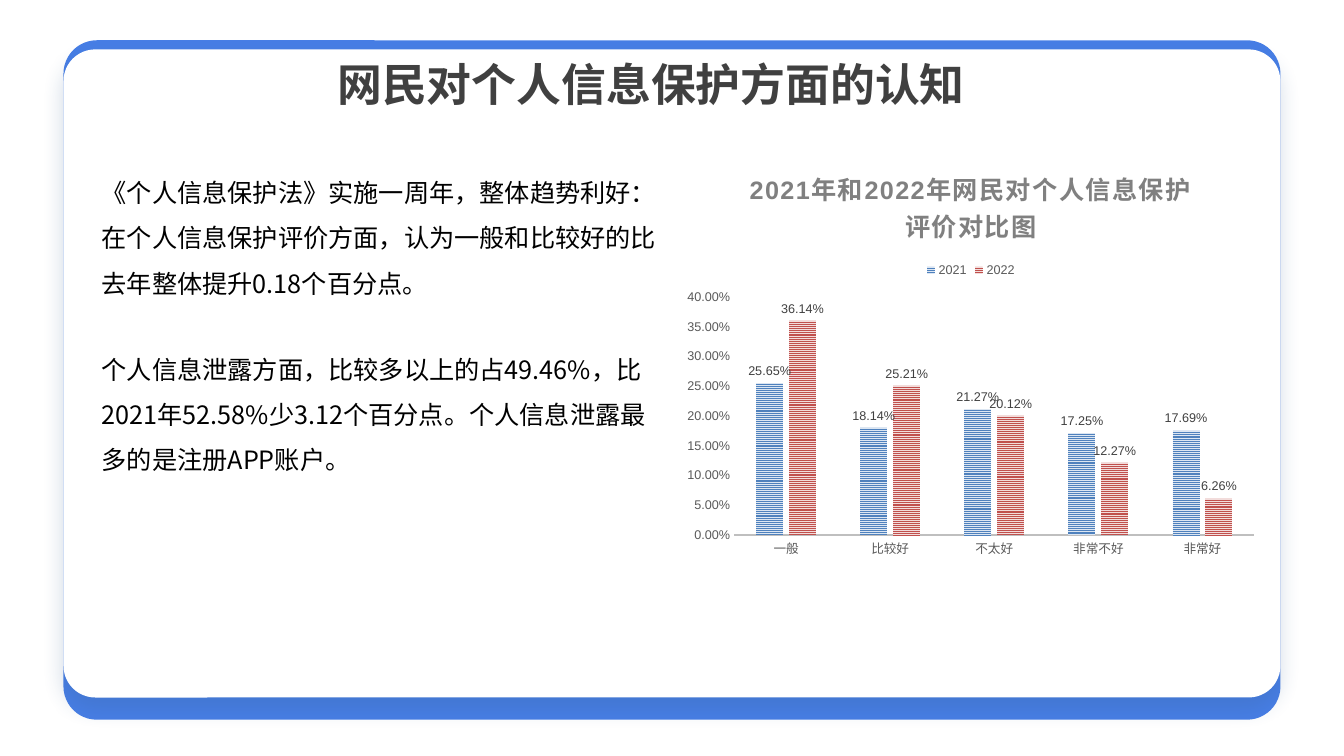
from lxml import etree
from pptx import Presentation
from pptx.chart.data import CategoryChartData
from pptx.dml.color import RGBColor
from pptx.enum.chart import XL_CHART_TYPE, XL_LABEL_POSITION, XL_LEGEND_POSITION, XL_TICK_MARK
from pptx.enum.dml import MSO_PATTERN
from pptx.enum.shapes import MSO_SHAPE
from pptx.enum.text import PP_ALIGN
from pptx.oxml import parse_xml
from pptx.oxml.ns import nsdecls, qn
from pptx.util import Inches, Pt

BLUE = RGBColor(0x47, 0x7E, 0xE5)
WHITE = RGBColor(0xFF, 0xFF, 0xFF)
BLACK = RGBColor(0, 0, 0)
DARK = RGBColor(0x40, 0x40, 0x40)
GRAY = RGBColor(0x59, 0x59, 0x59)
MID = RGBColor(0x80, 0x80, 0x80)
PALE = RGBColor(0xBF, 0xBF, 0xBF)
BAR_BLUE = RGBColor(0x4F, 0x81, 0xBD)
BAR_RED = RGBColor(0xC0, 0x50, 0x4D)
ICE = RGBColor(0xDC, 0xE6, 0xF2)
ROSE = RGBColor(0xF2, 0xDC, 0xDB)
CJK = "Noto Sans CJK SC"


def style(font, size, color, name="Arial", bold=False):
    font.size = Pt(size)
    font.color.rgb = color
    font.name = name
    font.bold = bold


def write(para, text, size=18, color=BLACK, name=CJK, bold=False,
          align=None, line=None, before=None, track=None):
    run = para.add_run()
    run.text = text
    style(run.font, size, color, name, bold)
    props = run.font._element
    etree.SubElement(props, qn("a:ea")).set("typeface", CJK)
    if track:
        props.set("spc", str(track))
    if align is not None:
        para.alignment = align
    if line:
        para.line_spacing = line
    if before:
        para.space_before = Pt(before)


prs = Presentation()
prs.slide_width = Inches(13.33)
prs.slide_height = Inches(7.5)
slide = prs.slides.add_slide(prs.slide_layouts[6])
shapes = slide.shapes

for top, height, color in [(0.4, 6.74, BLUE), (0.49, 6.43, WHITE)]:
    card = shapes.add_shape(MSO_SHAPE.ROUNDED_RECTANGLE, Inches(0.63), Inches(top),
                            Inches(12.07), Inches(height))
    card.adjustments[0] = 0.049
    card.fill.solid()
    card.fill.fore_color.rgb = color
    card.line.fill.background()
    card.shadow.inherit = False

glow = card._element.spPr.find(qn("a:effectLst"))
glow.append(parse_xml(
    f'<a:outerShdw {nsdecls("a")} blurRad="{Pt(16)}" dist="{Pt(8)}" dir="5400000" '
    'algn="t" rotWithShape="0"><a:srgbClr val="376092"><a:alpha val="23000"/>'
    '</a:srgbClr></a:outerShdw>'))

title = shapes.add_textbox(Inches(2.33), Inches(0.51), Inches(8.26), Inches(0.64))
title.text_frame.word_wrap = True
write(title.text_frame.paragraphs[0], "网民对个人信息保护方面的认知", size=32, color=DARK,
      name="Arial", bold=True, align=PP_ALIGN.CENTER)

data = CategoryChartData(number_format="0.00%")
data.categories = ["一般", "比较好", "不太好", "非常不好", "非常好"]
data.add_series("2021", [0.2565, 0.1814, 0.2127, 0.1725, 0.1769])
data.add_series("2022", [0.3614, 0.2521, 0.2012, 0.1227, 0.0626])
chart = shapes.add_chart(XL_CHART_TYPE.COLUMN_CLUSTERED, Inches(6.7), Inches(1.48),
                         Inches(5.86), Inches(4.13), data).chart
style(chart.font, 10, BLACK)
chart.has_title = True
head = chart.chart_title
head.include_in_layout = False
write(head.text_frame.paragraphs[0], "2021年和2022年网民对个人信息保护评价对比图",
      color=MID, name="Arial", bold=True, track=100)
chart.has_legend = True
chart.legend.position = XL_LEGEND_POSITION.TOP
chart.legend.include_in_layout = False
style(chart.legend.font, 9, GRAY)

for axis in (chart.category_axis, chart.value_axis):
    axis.has_major_gridlines = False
    axis.major_tick_mark = XL_TICK_MARK.NONE
    axis.minor_tick_mark = XL_TICK_MARK.NONE
    style(axis.tick_labels.font, 9, GRAY)
chart.category_axis.format.line.color.rgb = PALE
chart.category_axis.format.line.width = Pt(1.5)
chart.value_axis.format.line.fill.background()
chart.value_axis.tick_labels.number_format = "0.00%"
chart.value_axis.tick_labels.number_format_is_linked = False

plot = chart.plots[0]
plot.vary_by_categories = False
plot.gap_width = 164
plot.overlap = -22
for series, (front, back) in zip(plot.series, [(BAR_BLUE, ICE), (BAR_RED, ROSE)]):
    fill = series.format.fill
    fill.patterned()
    fill.pattern = MSO_PATTERN.NARROW_HORIZONTAL
    fill.fore_color.rgb = front
    fill.back_color.rgb = back
    labels = series.data_labels
    labels.show_value = True
    labels.position = XL_LABEL_POSITION.OUTSIDE_END
    labels.number_format = "0.00%"
    labels.number_format_is_linked = False
    style(labels.font, 9, DARK)

body = shapes.add_textbox(Inches(0.91), Inches(1.56), Inches(5.79), Inches(1.17))
frame = body.text_frame
frame.word_wrap = True
para = frame.paragraphs[0]
write(para, "《个人信息保护法》实施一周年，整体趋势利好：", line=1.5)
for text, gap in [
    ("在个人信息保护评价方面，认为一般和比较好的比去年整体提升0.18个百分点。", None),
    ("个人信息泄露方面，比较多以上的占49.46%，比2021年52.58%少3.12个百分点。"
     "个人信息泄露最多的是注册APP账户。", 29),
]:
    write(frame.add_paragraph(), text, line=1.5, before=gap)

prs.save("out.pptx")
